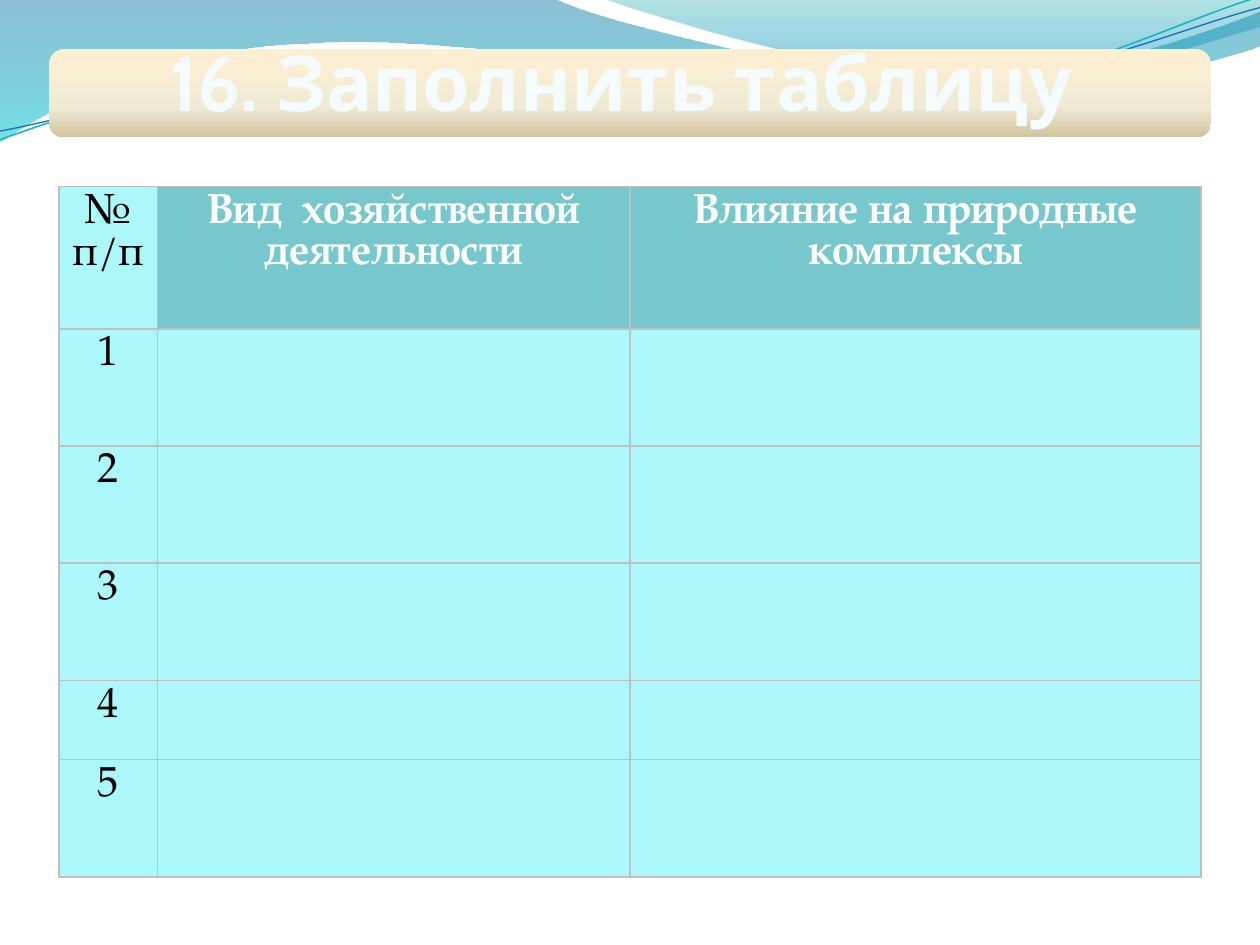
import math
import pptx
import pptx.util
import pptx.dml.color
import pptx.enum.shapes
import pptx.enum.text
import pptx.oxml
import pptx.oxml.ns
from dataclasses import dataclass
from lxml import etree
from pptx.util import Inches


@dataclass(frozen=True)
class Theme:
    title_font: str = "Cabin"
    table_font: str = "TeX Gyre Pagella"
    title_size: float = 44
    table_size: float = 24
    title_fill: str = "00DAE4"
    title_outline: str = "F4FBFC"
    text: str = "000000"
    header_text: str = "FFFFFF"
    header_fill: str = "089CA3"
    cell_fill: str = "5EF0F7"
    border: str = "BFBFBF"
    teal_line: str = "0AB8BF"
    blue_line: str = "0F6FC6"
    # Gradient stops: position, colour, opacity in percent
    wide_wave: tuple = ((0, "0074A1", 45), (100, "00C6CF", 55))
    narrow_wave: tuple = ((0, "00A1A9", 30), (80, "008BBF", 45))
    banner: tuple = ((0, "FFEFD1", 100), (65, "F0EBD5", 100), (100, "D1C39F", 100))


THEME = Theme()

# Outlines in inches: a pair is a line's end, a sextuple is a Bezier curve
WIDE_WAVE = [(0, 0), (4.4, -0.01), (4.76, 0.17, 6.64, 0.63, 7.58, 0.63),
             (8.53, 0.63, 9.58, 0.26, 10, 0.09), (10.01, 0.36),
             (9.83, 0.44, 8.7, 0.76, 7.46, 0.75), (6.22, 0.75, 3.82, 0.28, 2.57, 0.34),
             (1.29, 0.36, 0.46, 0.83, -0.01, 1.13), (0, 0)]
NARROW_WAVE = [(4.79, -0.01), (5.09, 0.11, 6.82, 0.62, 7.69, 0.65),
               (8.56, 0.69, 9.61, 0.32, 10, 0.21), (10, 0), (4.79, -0.01)]
TEAL_CURVE = [(0, 1.11), (0.48, 0.93, 1.58, 0.57, 2.77, 0.52),
              (3.95, 0.47, 5.93, 0.89, 7.13, 0.8), (8.33, 0.71, 9.38, 0.15, 9.98, -0.02)]
BLUE_CURVE = [(0, 1.04), (0.47, 0.96, 1.64, 0.61, 2.83, 0.56),
              (4.03, 0.51, 5.97, 0.84, 7.17, 0.75), (8.36, 0.67, 9.41, 0.21, 10, 0.06)]
CURVE_ROTATION = 357.3

HEADERS = ["№\nп/п", "Вид  хозяйственной деятельности", "Влияние на природные комплексы"]
COLUMN_WIDTHS = [0.78, 3.75, 4.53]
ROW_HEIGHTS = [1.13, 0.93, 0.93, 0.93, 0.63, 0.93]


def solid_xml(color, opacity=100):
    return (f'<a:solidFill {pptx.oxml.ns.nsdecls("a")}><a:srgbClr val="{color}">'
            f'<a:alpha val="{opacity * 1000}"/></a:srgbClr></a:solidFill>')


def set_gradient(shape, stops):
    """Fill a shape from top to bottom."""
    shape.fill.background()
    marks = "".join(f'<a:gs pos="{position * 1000}"><a:srgbClr val="{color}">'
                    f'<a:alpha val="{opacity * 1000}"/></a:srgbClr></a:gs>'
                    for position, color, opacity in stops)
    gradient = pptx.oxml.parse_xml(
        f'<a:gradFill {pptx.oxml.ns.nsdecls("a")} rotWithShape="1"><a:gsLst>{marks}</a:gsLst>'
        '<a:lin ang="5400000" scaled="0"/></a:gradFill>')
    properties = shape._element.spPr
    properties.replace(properties.find(pptx.oxml.ns.qn("a:noFill")), gradient)


def write_text(frame, text, *, font, size, color, bold=False, spacing=None):
    for index, line in enumerate(text.split("\n")):
        para = frame.paragraphs[0] if index == 0 else frame.add_paragraph()
        para.alignment = pptx.enum.text.PP_ALIGN.CENTER
        if spacing:
            para.line_spacing = spacing
        span = para.add_run()
        span.text = line
        span.font.name = font
        span.font.size = pptx.util.Pt(size)
        span.font.bold = bold
        span.font.color.rgb = pptx.dml.color.RGBColor.from_string(color)


def add_outline(page, box, outline, closed, rotation=0):
    """Draw an outline whose numbers show where it lies after the rotation."""
    left, top, width, height = box
    shape_builder = page.shapes.build_freeform(Inches(left), Inches(top))
    shape_builder.add_line_segments([(Inches(left + width), Inches(top + height))], close=closed)
    shape = shape_builder.convert_to_shape()
    shape.shadow.inherit = False
    shape.rotation = rotation
    cosine, sine = math.cos(math.radians(rotation)), math.sin(math.radians(rotation))
    track = next(shape._element.iter(pptx.oxml.ns.qn("a:path")))
    for command in list(track):
        track.remove(command)
    for index, part in enumerate(outline):
        name = "moveTo" if index == 0 else "lnTo" if len(part) == 2 else "cubicBezTo"
        command = etree.SubElement(track, pptx.oxml.ns.qn(f"a:{name}"))
        for x, y in zip(part[::2], part[1::2]):
            across, down = x - left - width / 2, y - top - height / 2
            etree.SubElement(
                command, pptx.oxml.ns.qn("a:pt"),
                x=str(Inches(width / 2 + across * cosine + down * sine)),
                y=str(Inches(height / 2 - across * sine + down * cosine)))
    if closed:
        etree.SubElement(track, pptx.oxml.ns.qn("a:close"))
    return shape


def add_waves(page, left, top):
    for box, outline, stops in (
            ((left - 0.01, top - 0.01, 10.02, 1.14), WIDE_WAVE, THEME.wide_wave),
            ((left + 4.79, top - 0.01, 5.21, 0.7), NARROW_WAVE, THEME.narrow_wave)):
        wave = add_outline(page, box, outline, closed=True)
        set_gradient(wave, stops)
        wave.line.fill.background()
    for box, outline, color, width in (
            ((left - 0.02, top + 0.22, 10.02, 0.71), TEAL_CURVE, THEME.teal_line, 0.85),
            ((left - 0.02, top + 0.3, 10.03, 0.58), BLUE_CURVE, THEME.blue_line, 0.75)):
        curve = add_outline(page, box, outline, closed=False, rotation=CURVE_ROTATION)
        curve.fill.background()
        curve.line.color.rgb = pptx.dml.color.RGBColor.from_string(color)
        curve.line.width = pptx.util.Pt(width)


def add_banner(page, left, top, width, height):
    banner = page.shapes.add_shape(pptx.enum.shapes.MSO_SHAPE.ROUNDED_RECTANGLE,
                                   Inches(left), Inches(top), Inches(width), Inches(height))
    banner.shadow.inherit = False
    banner.line.fill.background()
    set_gradient(banner, THEME.banner)
    frame = banner.text_frame
    frame.word_wrap = True
    frame.vertical_anchor = pptx.enum.text.MSO_ANCHOR.MIDDLE
    write_text(frame, "16. Заполнить таблицу ", font=THEME.title_font, size=THEME.title_size,
               color=THEME.title_fill, bold=True, spacing=0.65)
    # Translucent letters with a pale outline
    properties = frame.paragraphs[0].runs[0].font._element
    fill = properties.find(pptx.oxml.ns.qn("a:solidFill"))
    properties.replace(fill, pptx.oxml.parse_xml(solid_xml(THEME.title_fill, 50)))
    outline = etree.Element(pptx.oxml.ns.qn("a:ln"), w=str(pptx.util.Pt(2.3)))
    outline.append(pptx.oxml.parse_xml(solid_xml(THEME.title_outline)))
    properties.insert(0, outline)


def style_cell(cell, color, opacity):
    properties = cell._tc.get_or_add_tcPr()
    for side in ("lnL", "lnR", "lnT", "lnB"):
        border = etree.SubElement(properties, pptx.oxml.ns.qn(f"a:{side}"),
                                  w=str(pptx.util.Pt(1)))
        border.append(pptx.oxml.parse_xml(solid_xml(THEME.border)))
    properties.append(pptx.oxml.parse_xml(solid_xml(color, opacity)))


def add_activity_table(page, left, top, width, height):
    table = page.shapes.add_table(len(ROW_HEIGHTS), len(COLUMN_WIDTHS), Inches(left),
                                  Inches(top), Inches(width), Inches(height)).table
    table.horz_banding = False
    for column, column_width in zip(table.columns, COLUMN_WIDTHS):
        column.width = Inches(column_width)
    for row_index, row_height in enumerate(ROW_HEIGHTS):
        table.rows[row_index].height = Inches(row_height)
        for column_index, header in enumerate(HEADERS):
            cell = table.cell(row_index, column_index)
            heading = row_index == 0 and column_index > 0
            if heading:
                style_cell(cell, THEME.header_fill, 55)
            else:
                style_cell(cell, THEME.cell_fill, 52)
            if row_index == 0 or column_index == 0:
                write_text(cell.text_frame, header if row_index == 0 else str(row_index),
                           font=THEME.table_font, size=THEME.table_size, bold=heading,
                           color=THEME.header_text if heading else THEME.text)


def main():
    deck = pptx.Presentation()
    deck.slide_width = Inches(10)
    deck.slide_height = Inches(7.5)
    page = deck.slides.add_slide(deck.slide_layouts[6])
    add_waves(page, 0, 0)
    add_banner(page, 0.39, 0.39, 9.22, 0.7)
    add_activity_table(page, 0.47, 1.48, 9.06, 5.47)
    deck.save("out.pptx")


if __name__ == "__main__":
    main()
